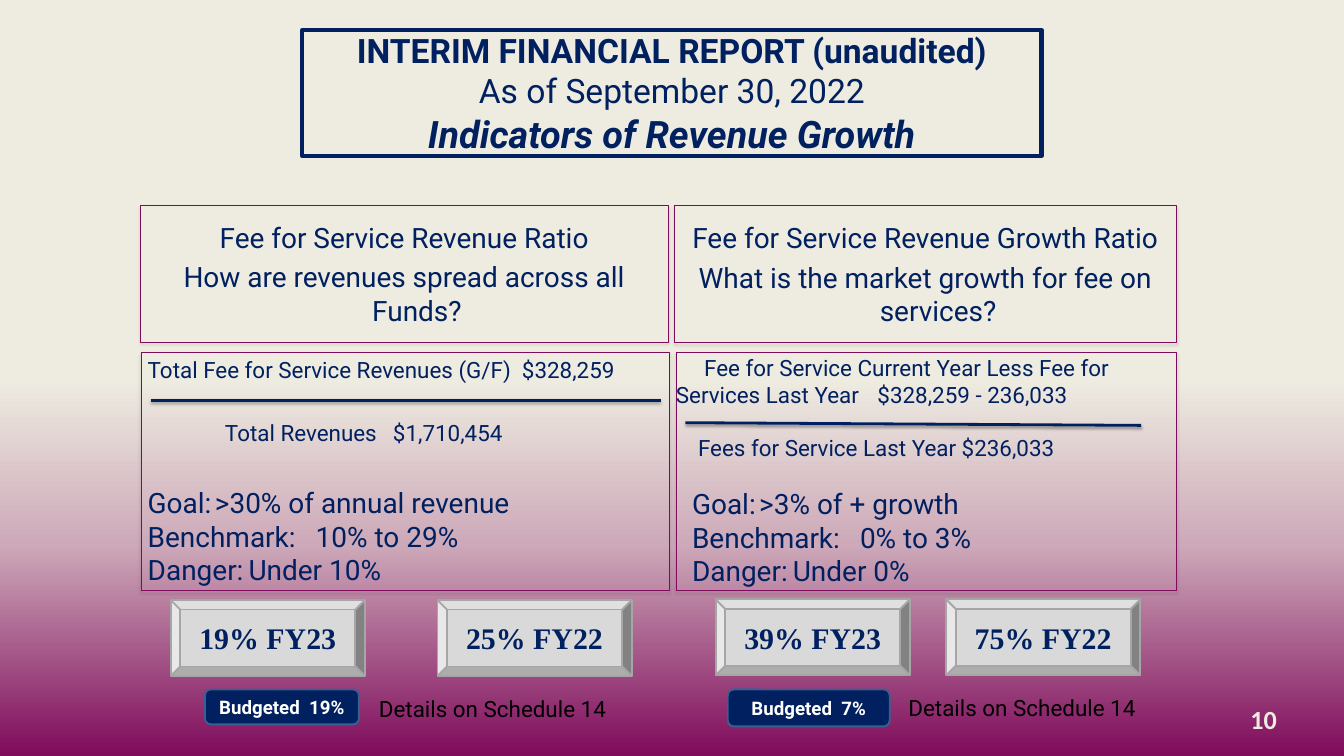
from lxml import etree
from pptx import Presentation
from pptx.dml.color import RGBColor
from pptx.enum import shapes, text
from pptx.oxml.ns import qn
from pptx.util import Inches, Pt

COLORS = {"navy": "002060", "plum": "7F0B5B", "rose": "CDA9B9", "cream": "EEECE1",
          "blue": "376092", "silver": "D9D9D9", "gray": "A6A6A6",
          "white": "FFFFFF", "black": "000000"}
BACKGROUND = [(50, "cream"), (72, "rose"), (100, "plum")]

TITLE = [("INTERIM FINANCIAL REPORT (unaudited)", 36, True, False),
         ("As of September 30, 2022", 36, False, False),
         ("Indicators of Revenue Growth", 40.5, True, True)]
HANGING = dict(align="CENTER", left=0.38, first=-0.38, before=6)

# Paragraphs are (wording, layout); boxes are (left, top, width, height).
RATIOS = [
    dict(question_box=(2.09, 3.06, 7.85, 2.03), detail_box=(2.1, 5.25, 7.86, 3.54),
         question=["Fee for Service Revenue Ratio",
                   "How are revenues spread across all Funds?"],
         formula_box=(2.1, 5.25, 7.86, 1.72),
         formula=[("Total Fee for Service Revenues (G/F)  $328,259", {}),
                  ("Total Revenues\t$1,710,454", dict(left=1.15, tab=5.39, before=39))],
         fraction=(2.24, 5.96, 9.83, 5.96),
         goal_box=(2.1, 7.18, 7.86, 1.62), goal_tab=3.2,
         goals=["Goal:\t>30% of annual revenue", "Benchmark:\t10% to 29%",
                "Danger:\tUnder 10%"],
         years=[(2.54, 8.93, "19% FY23"), (6.51, 8.93, "25% FY22")],
         budget=(3.05, 10.26, 2.29, 0.52), budgeted="Budgeted  19%",
         note=(5.54, 10.3, 3.88, 0.5)),
    dict(question_box=(10.04, 3.06, 7.46, 2.04), detail_box=(10.06, 5.25, 7.44, 3.54),
         question=["Fee for Service Revenue Growth Ratio",
                   "What is the market growth for fee on services?"],
         formula_box=(9.96, 5.22, 7.54, 1.72),
         formula=[("Fee for Service Current Year Less Fee for Services Last Year"
                   "\t$328,259 - 236,033", dict(first=0.42, tab=3.39)),
                  ("Fees for Service Last Year $236,033", dict(left=0.33, before=28))],
         fraction=(10.2, 6.29, 16.98, 6.33),
         goal_box=(10.2, 7.19, 7.06, 1.62), goal_tab=2.72,
         goals=["Goal:\t>3% of + growth", "Benchmark:\t0% to 3%", "Danger:\tUnder 0%"],
         years=[(10.65, 8.92, "39% FY23"), (14.08, 8.92, "75% FY22")],
         budget=(10.83, 10.26, 2.41, 0.55), budgeted="Budgeted  7%",
         note=(13.42, 10.28, 3.83, 0.5)),
]
NOTE = "Details on Schedule 14"
YEAR_SIZE = (2.89, 1.13)

deck = Presentation()
deck.slide_width, deck.slide_height = Inches(20), Inches(11.25)
page = deck.slides.add_slide(deck.slide_layouts[6])


def rgb(name):
    return RGBColor.from_string(COLORS[name])


def paint_background():
    fill = page.background.fill
    fill.gradient()
    fill.gradient_angle = 270
    stops = page._element.find(".//" + qn("a:gsLst"))
    for stop in list(stops):
        stops.remove(stop)
    for position, name in BACKGROUND:
        stop = etree.SubElement(stops, qn("a:gs"), pos=str(position * 1000))
        etree.SubElement(stop, qn("a:srgbClr"), val=COLORS[name])


def add_soft_shadow(item):
    properties = item._element.spPr
    effects = properties.find(qn("a:effectLst"))
    if effects is None:
        effects = etree.SubElement(properties, qn("a:effectLst"))
    shadow = etree.SubElement(effects, qn("a:outerShdw"), blurRad=str(Pt(3.1)),
                              dist=str(Pt(1.8)), dir="5400000", rotWithShape="0")
    color = etree.SubElement(shadow, qn("a:srgbClr"), val=COLORS["black"])
    etree.SubElement(color, qn("a:alpha"), val="35000")


def add_box(kind, place, fill, line, width):
    box = page.shapes.add_shape(shapes.MSO_SHAPE[kind], *map(Inches, place))
    box.shadow.inherit = False
    if fill:
        box.fill.solid()
        box.fill.fore_color.rgb = rgb(fill)
    else:
        box.fill.background()
    box.line.color.rgb = rgb(line)
    box.line.width = Pt(width)
    box.text_frame.word_wrap = True
    box.text_frame.vertical_anchor = text.MSO_ANCHOR.MIDDLE
    return box


def add_panel(place):
    """Add a shadowed frame that is filled with the slide background."""
    panel = add_box("RECTANGLE", place, None, "plum", 0.75)
    properties = panel._element.spPr
    properties.remove(properties.find(qn("a:noFill")))
    panel._element.set("useBgFill", "1")
    add_soft_shadow(panel)
    return panel


def add_text_box(place):
    box = page.shapes.add_textbox(*map(Inches, place))
    box.text_frame.word_wrap = True
    return box


def write(box, wording, size, color="navy", font="Roboto", bold=False, italic=False,
          align="LEFT", left=0, first=0, tab=None, before=0):
    """Add one paragraph; left, first and tab are inches, before is points."""
    frame = box.text_frame
    para = frame.paragraphs[0]
    if para.runs:
        para = frame.add_paragraph()
    para.alignment = text.PP_ALIGN[align]
    para.space_before = Pt(before)
    layout = para._p.get_or_add_pPr()
    layout.set("marL", str(Inches(left)))
    layout.set("indent", str(Inches(first)))
    if tab:
        tabs = etree.SubElement(layout, qn("a:tabLst"))
        etree.SubElement(tabs, qn("a:tab"), pos=str(Inches(tab)), algn="l")
    span = para.add_run()
    span.text = wording
    span.font.name, span.font.size = font, Pt(size)
    span.font.bold, span.font.italic = bold, italic
    span.font.color.rgb = rgb(color)


def clear_margins(box):
    frame = box.text_frame
    frame.margin_left = frame.margin_right = frame.margin_top = frame.margin_bottom = 0


def add_fraction_line(ends):
    line = page.shapes.add_connector(shapes.MSO_CONNECTOR.STRAIGHT, *map(Inches, ends))
    line.line.color.rgb = rgb("navy")
    line.line.width = Pt(3)
    add_soft_shadow(line)


def add_ratio(ratio):
    question = add_panel(ratio["question_box"])
    for wording in ratio["question"]:
        write(question, wording, 30, **HANGING)
    add_panel(ratio["detail_box"])
    formula = add_text_box(ratio["formula_box"])
    for wording, layout in ratio["formula"]:
        write(formula, wording, 24, **layout)
    add_fraction_line(ratio["fraction"])
    goals = add_text_box(ratio["goal_box"])
    for wording in ratio["goals"]:
        write(goals, wording, 30, tab=ratio["goal_tab"])
    for left, top, wording in ratio["years"]:
        year = add_box("BEVEL", (left, top, *YEAR_SIZE), "silver", "gray", 2)
        write(year, wording, 32, font="Times New Roman", bold=True, align="CENTER")
    budget = add_box("ROUNDED_RECTANGLE", ratio["budget"], "navy", "blue", 2)
    write(budget, ratio["budgeted"], 20, "white", bold=True, align="CENTER")
    write(add_text_box(ratio["note"]), NOTE, 24, "black")


paint_background()
title = add_box("RECTANGLE", (4.5, 0.45, 11, 1.87), None, "navy", 4.5)
clear_margins(title)
for wording, size, bold, italic in TITLE:
    write(title, wording, size, bold=bold, italic=italic, align="CENTER")
for ratio in RATIOS:
    add_ratio(ratio)
number = add_text_box((18.58, 10.46, 0.42, 0.47))
clear_margins(number)
write(number, "10", 28, "cream", "Calibri", bold=True, align="RIGHT")
deck.save("out.pptx")
